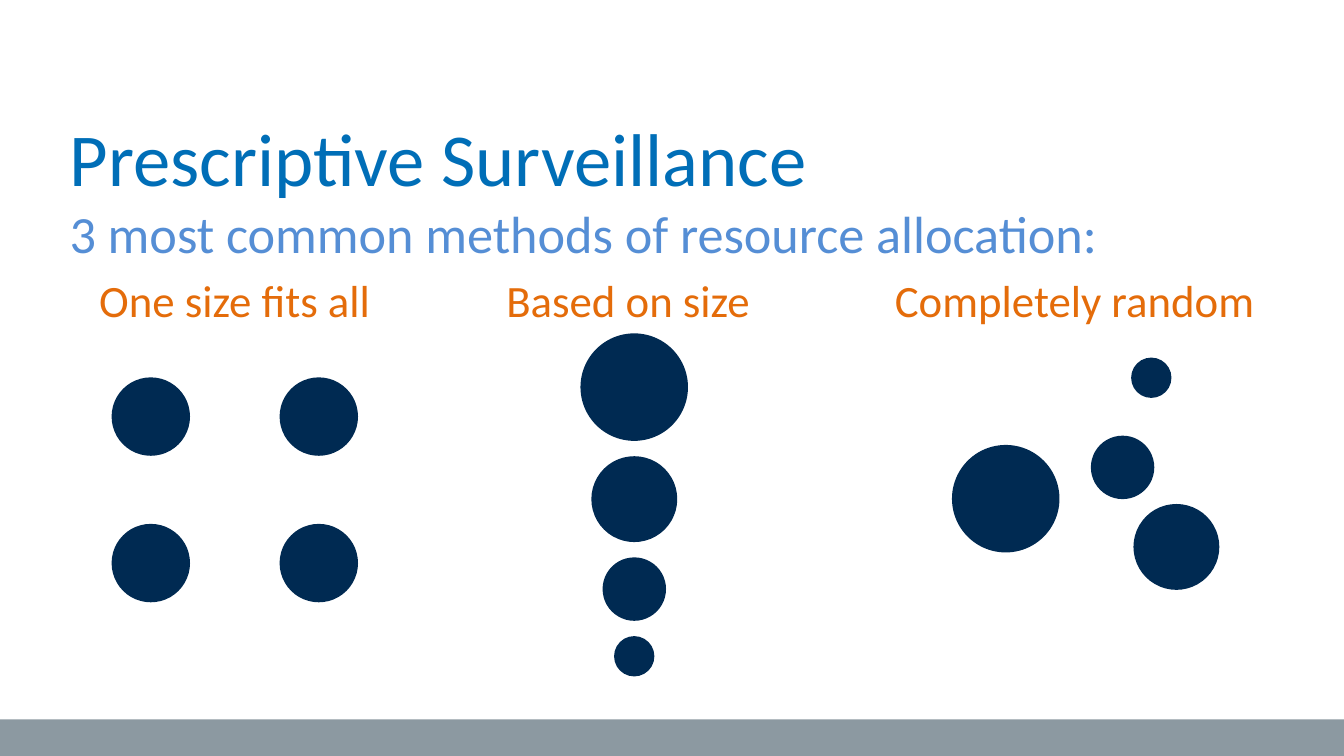
from dataclasses import dataclass
from itertools import product

from pptx import Presentation
from pptx.dml.color import RGBColor
from pptx.enum.shapes import MSO_SHAPE
from pptx.enum.text import MSO_ANCHOR, MSO_AUTO_SIZE, PP_ALIGN
from pptx.util import Pt


@dataclass(frozen=True)
class Theme:
    font: str = "Calibri"
    title_color: str = "006EB7"
    subtitle_color: str = "558ED5"
    method_color: str = "E46C0A"
    circle_color: str = "002A52"
    footer_color: str = "8C99A1"
    title_size: int = 40
    subtitle_size: int = 28
    method_size: int = 24


THEME = Theme()
SLIDE_WIDTH, SLIDE_HEIGHT = 720, 405
LARGE, MEDIUM, SMALL, TINY = 57.6, 46, 34, 21.6
EQUAL = 42


def write_text(box, text, size, color):
    frame = box.text_frame
    frame.text = text
    frame.word_wrap = False
    frame.auto_size = MSO_AUTO_SIZE.SHAPE_TO_FIT_TEXT
    frame.vertical_anchor = MSO_ANCHOR.TOP
    paragraph = frame.paragraphs[0]
    paragraph.alignment = PP_ALIGN.LEFT
    paragraph.font.name = THEME.font
    paragraph.font.size = Pt(size)
    paragraph.font.color.rgb = RGBColor.from_string(color)


def add_title(slide, text, left, top, width, height):
    title = slide.shapes.title
    title.left, title.top = Pt(left), Pt(top)
    title.width, title.height = Pt(width), Pt(height)
    write_text(title, text, THEME.title_size, THEME.title_color)


def add_label(slide, text, left, top, width, height, size, color):
    label = slide.shapes.add_textbox(Pt(left), Pt(top), Pt(width), Pt(height))
    write_text(label, text, size, color)


def add_solid(slide, preset, left, top, width, height, color):
    solid = slide.shapes.add_shape(preset, Pt(left), Pt(top), Pt(width), Pt(height))
    solid.shadow.inherit = False
    solid.fill.solid()
    solid.fill.fore_color.rgb = RGBColor.from_string(color)
    solid.line.fill.background()


def add_circle(slide, center_x, center_y, diameter):
    add_solid(slide, MSO_SHAPE.OVAL, center_x - diameter / 2, center_y - diameter / 2,
              diameter, diameter, THEME.circle_color)


def add_equal_grid(slide):
    for center_y, center_x in product((223.2, 301.7), (80.8, 170.8)):
        add_circle(slide, center_x, center_y, EQUAL)


def add_size_column(slide, center_x=339.8, top=178.6, gap=8.2):
    for diameter in (LARGE, MEDIUM, SMALL, TINY):
        add_circle(slide, center_x, top + diameter / 2, diameter)
        top += diameter + gap


def add_random_scatter(slide):
    for center_x, center_y, diameter in (
        (538.8, 267.2, LARGE),
        (616.8, 202.4, TINY),
        (630.2, 293, MEDIUM),
        (601.4, 250.4, SMALL),
    ):
        add_circle(slide, center_x, center_y, diameter)


def main():
    deck = Presentation()
    deck.slide_width, deck.slide_height = Pt(SLIDE_WIDTH), Pt(SLIDE_HEIGHT)
    slide = deck.slides.add_slide(deck.slide_layouts[5])

    footer_height = 19.6
    add_solid(slide, MSO_SHAPE.RECTANGLE, 0, SLIDE_HEIGHT - footer_height,
              SLIDE_WIDTH, footer_height, THEME.footer_color)
    add_title(slide, "Prescriptive Surveillance", 30.2, 56.2, 422.6, 55.4)
    add_label(slide, "3 most common methods of resource allocation:",
              30.2, 104.4, 571.7, 41, THEME.subtitle_size, THEME.subtitle_color)
    for method, left, width in (
        ("One size fits all", 46.1, 161.3),
        ("Based on size", 264.2, 151.9),
        ("Completely random", 472.3, 208.8),
    ):
        add_label(slide, method, left, 142.6, width, 36.7,
                  THEME.method_size, THEME.method_color)

    add_equal_grid(slide)
    add_size_column(slide)
    add_random_scatter(slide)
    deck.save("out.pptx")


if __name__ == "__main__":
    main()
